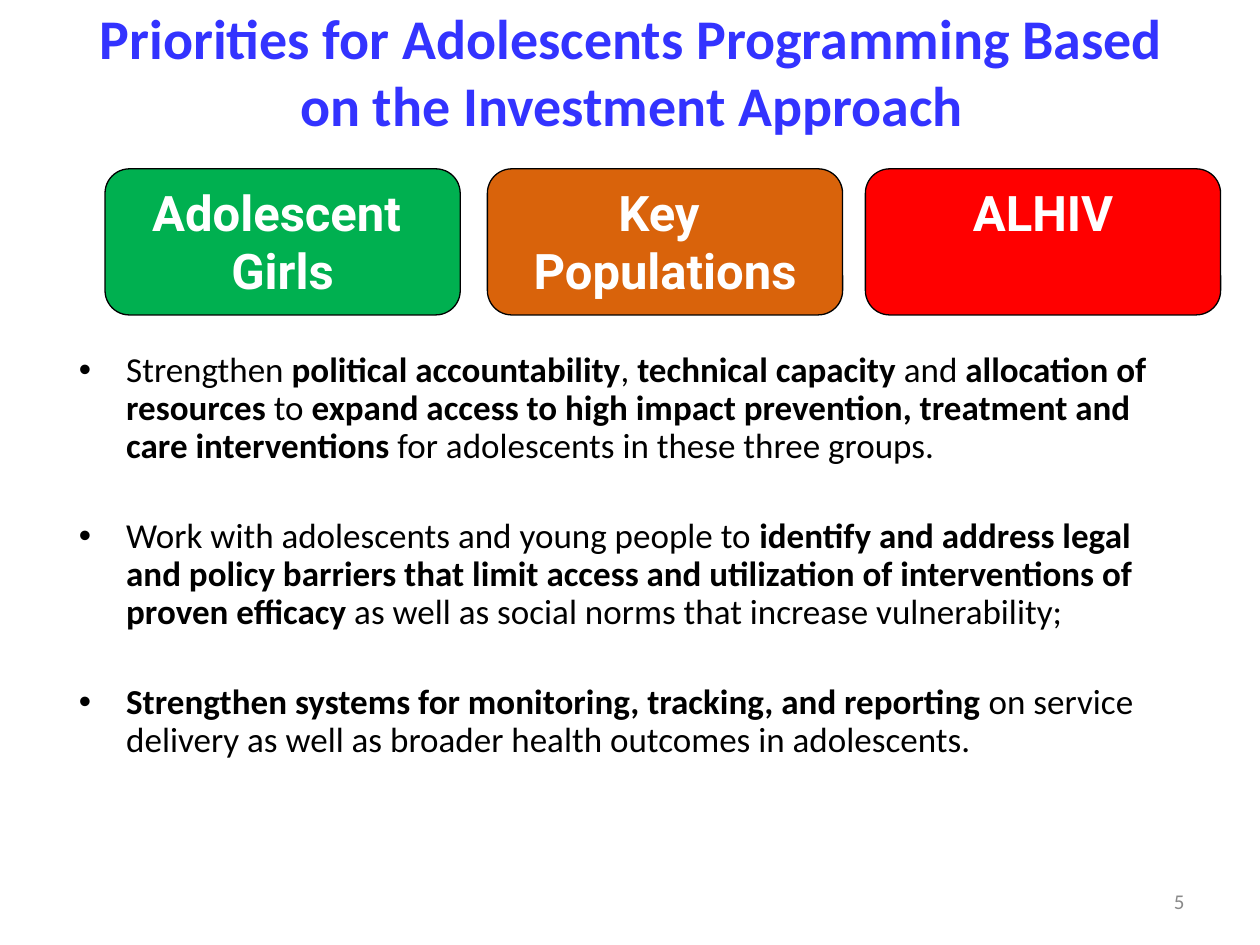
from dataclasses import dataclass
from pptx import Presentation
from pptx.dml.color import RGBColor
from pptx.enum.shapes import MSO_SHAPE
from pptx.enum.text import MSO_ANCHOR, MSO_AUTO_SIZE, PP_ALIGN
from pptx.oxml import parse_xml
from pptx.oxml.ns import nsdecls
from pptx.util import Pt


@dataclass(frozen=True)
class Theme:
    font: str = "Calibri"
    label: str = "Roboto"
    blue: str = "3333FF"
    black: str = "000000"
    white: str = "FFFFFF"
    grey: str = "898989"
    green: str = "00B050"
    orange: str = "D9630B"
    red: str = "FF0000"
    head: int = 32
    group: int = 28
    body: int = 20
    small: int = 12


def write(para, text, *, font, size, color, bold=False, align=None):
    """Add one formatted run to a paragraph."""
    run = para.add_run()
    run.text = text
    run.font.name, run.font.size, run.font.bold = font, Pt(size), bold
    run.font.color.rgb = RGBColor.from_string(color)
    if align is not None:
        para.alignment = align


class Deck:
    def __init__(self, theme):
        self.theme = theme
        self.file = Presentation()
        self.file.slide_width, self.file.slide_height = Pt(720), Pt(540)
        self.slide = self.file.slides.add_slide(self.file.slide_layouts[5])

    def frame(self, shape, anchor=MSO_ANCHOR.TOP, wrap=True):
        frame = shape.text_frame
        frame.auto_size = MSO_AUTO_SIZE.NONE
        frame.word_wrap, frame.vertical_anchor = wrap, anchor
        return frame

    def box(self, *area, anchor=MSO_ANCHOR.TOP):
        shape = self.slide.shapes.add_textbox(*map(Pt, area))
        return self.frame(shape, anchor)

    def title(self, text, *area):
        t, shape = self.theme, self.slide.shapes.title
        shape.left, shape.top, shape.width, shape.height = map(Pt, area)
        para = self.frame(shape, MSO_ANCHOR.MIDDLE).paragraphs[0]
        write(para, text, font=t.font, size=t.head, color=t.blue,
              bold=True, align=PP_ALIGN.CENTER)

    def card(self, lines, fill, *area):
        t = self.theme
        shape = self.slide.shapes.add_shape(
            MSO_SHAPE.ROUNDED_RECTANGLE, *map(Pt, area))
        shape.shadow.inherit = False
        shape.fill.solid()
        shape.fill.fore_color.rgb = RGBColor.from_string(fill)
        shape.line.color.rgb = RGBColor.from_string(t.black)
        shape.line.width = Pt(0.75)
        frame = self.frame(shape, wrap=False)
        for i, line in enumerate(lines):
            para = frame.add_paragraph() if i else frame.paragraphs[0]
            write(para, line, font=t.label, size=t.group, color=t.white,
                  bold=True, align=PP_ALIGN.CENTER)

    def bullets(self, items, *area):
        """Each item is a list of (text, bold) pairs."""
        t, frame = self.theme, self.box(*area)
        for i, item in enumerate(items):
            para = frame.add_paragraph() if i else frame.paragraphs[0]
            para.line_spacing, para.space_after = 0.9, Pt(30)
            props = para._p.get_or_add_pPr()
            props.set("marL", str(Pt(27)))
            props.set("indent", str(Pt(-27)))
            for mark in ('<a:buFont {} typeface="Arial"/>',
                         '<a:buChar {} char="•"/>'):
                props.append(parse_xml(mark.format(nsdecls("a"))))
            for text, bold in item:
                write(para, text, font=t.font, size=t.body,
                      color=t.black, bold=bold)

    def number(self, text, *area):
        t = self.theme
        para = self.box(*area, anchor=MSO_ANCHOR.MIDDLE).paragraphs[0]
        write(para, text, font=t.font, size=t.small, color=t.grey,
              align=PP_ALIGN.RIGHT)


def main():
    theme = Theme()
    deck = Deck(theme)

    # Heading
    deck.title("Priorities for Adolescents Programming Based on the "
               "Investment Approach", 37.5, -4.5, 647, 90)

    # Actions
    deck.bullets([
        [("Strengthen ", False), ("political accountability", True),
         (", ", False), ("technical capacity ", True), ("and ", False),
         ("allocation of resources ", True), ("to ", False),
         ("expand access to high impact prevention, treatment and care "
          "interventions ", True),
         ("for adolescents in these three groups.", False)],
        [("Work with adolescents and young people to ", False),
         ("identify and address legal and policy barriers that limit access "
          "and utilization of interventions of proven efficacy", True),
         (" as well as social norms that increase vulnerability;", False)],
        [("Strengthen systems for monitoring, tracking, and reporting ", True),
         ("on service delivery as well as broader health outcomes in "
          "adolescents.", False)],
    ], 38, 198, 646, 264)

    # Page number
    deck.number("5", 516, 500.5, 168, 29)

    # Priority groups
    groups = [(["Adolescent ", "Girls"], theme.green, 60),
              (["Key ", "Populations"], theme.orange, 278.5),
              (["ALHIV"], theme.red, 494.5)]
    for lines, fill, left in groups:
        deck.card(lines, fill, left, 96.5, 203, 83.5)

    deck.file.save("out.pptx")


if __name__ == "__main__":
    main()
